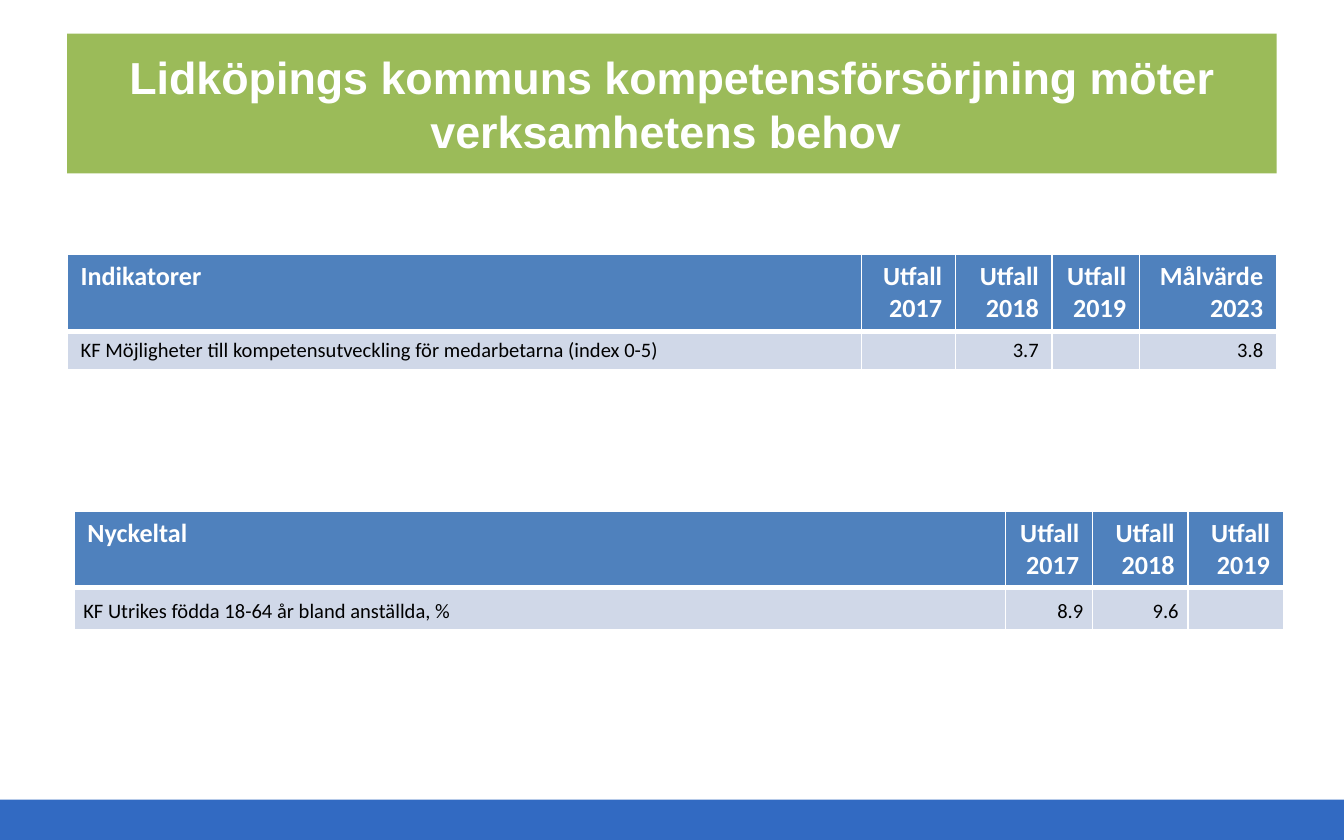
from lxml.etree import SubElement
from pptx import Presentation
from pptx.dml.color import RGBColor
from pptx.enum.shapes import MSO_SHAPE
from pptx.enum.text import MSO_ANCHOR, MSO_AUTO_SIZE, PP_ALIGN
from pptx.oxml.ns import qn
from pptx.util import Inches, Pt

WHITE, BLACK = "FFFFFF", "000000"
GREEN, BAR_BLUE = "9BBB59", "326AC2"
HEADER_BLUE, ROW_BLUE = "4F81BD", "D0D8E8"


def rgb(color):
    return RGBColor.from_string(color)


def paint(fill, color):
    fill.solid()
    fill.fore_color.rgb = rgb(color)


def draw_borders(cell, bottom_width):
    """Give a cell white borders; call before filling, as lines come first in tcPr."""
    properties = cell._tc.get_or_add_tcPr()
    for side, width in (("L", 1), ("R", 1), ("T", 1), ("B", bottom_width)):
        line = SubElement(properties, qn(f"a:ln{side}"), w=str(Pt(width)))
        solid = SubElement(line, qn("a:solidFill"))
        SubElement(solid, qn("a:srgbClr"), val=WHITE)


class SlideBuilder:
    body_font = "Calibri"
    title_font = "Arial"
    header_size, row_size, title_size = 14, 11, 24

    def __init__(self, slide):
        self.slide = slide

    def add_text(self, paragraph, text, font, size, color, bold):
        run = paragraph.add_run()
        run.text = text
        run.font.name = font
        run.font.size = Pt(size)
        run.font.bold = bold
        run.font.color.rgb = rgb(color)

    def title(self, text, left, top, width, height):
        banner = self.slide.shapes.title
        banner.left, banner.top = Inches(left), Inches(top)
        banner.width, banner.height = Inches(width), Inches(height)
        paint(banner.fill, GREEN)
        frame = banner.text_frame
        frame.word_wrap = True
        frame.auto_size = MSO_AUTO_SIZE.NONE
        frame.vertical_anchor = MSO_ANCHOR.MIDDLE
        paragraph = frame.paragraphs[0]
        paragraph.alignment = PP_ALIGN.CENTER
        self.add_text(paragraph, text, self.title_font, self.title_size, WHITE, True)

    def bar(self, left, top, width, height, color):
        bar = self.slide.shapes.add_shape(
            MSO_SHAPE.RECTANGLE, Inches(left), Inches(top), Inches(width), Inches(height))
        bar.shadow.inherit = False
        paint(bar.fill, color)
        bar.line.fill.background()

    def table(self, left, top, column_widths, row_heights, rows, padded=False):
        """Add a table with a header row; padded gives filled body cells their own margins."""
        table = self.slide.shapes.add_table(
            len(rows), len(column_widths), Inches(left), Inches(top),
            Inches(sum(column_widths)), Inches(sum(row_heights))).table
        for column, width in zip(table.columns, column_widths):
            column.width = Inches(width)
        for row, height in zip(table.rows, row_heights):
            row.height = Inches(height)
        for r, values in enumerate(rows):
            for c, value in enumerate(values):
                self.cell(table.cell(r, c), value, r == 0, c > 0, padded)

    def cell(self, cell, value, is_header, is_number, padded):
        draw_borders(cell, 3 if is_header else 1)
        paint(cell.fill, HEADER_BLUE if is_header else ROW_BLUE)
        size = self.header_size if is_header else self.row_size
        paragraph = cell.text_frame.paragraphs[0]
        if not value:
            SubElement(paragraph._p, qn("a:endParaRPr"), sz=str(size * 100))
            return
        if padded and not is_header:
            cell.vertical_anchor = MSO_ANCHOR.MIDDLE
            cell.margin_left = cell.margin_right = Inches(0.07)
            cell.margin_top, cell.margin_bottom = Inches(0.08), Inches(0.04)
        if is_number:
            paragraph.alignment = PP_ALIGN.RIGHT
        self.add_text(paragraph, value, self.body_font, size,
                      WHITE if is_header else BLACK, is_header)


def main():
    deck = Presentation()
    deck.slide_width, deck.slide_height = Inches(10), Inches(6.25)
    builder = SlideBuilder(deck.slides.add_slide(deck.slide_layouts[5]))

    builder.bar(0, 5.95, 10, 0.3, BAR_BLUE)
    builder.title("Lidköpings kommuns kompetensförsörjning möter verksamhetens behov ",
                  0.5, 0.25, 9, 1.04)

    outcomes = ["Utfall 2017", "Utfall 2018", "Utfall 2019"]
    builder.table(0.5, 1.89, [5.91, 0.7, 0.72, 0.65, 1.02], [0.57, 0.28], [
        ["Indikatorer", *outcomes, "Målvärde 2023"],
        ["KF Möjligheter till kompetensutveckling för medarbetarna (index 0-5)",
         "", "3.7", "", "3.8"],
    ])
    builder.table(0.55, 3.8, [6.93, 0.65, 0.71, 0.71], [0.57, 0.3], [
        ["Nyckeltal", *outcomes],
        ["KF Utrikes födda 18-64 år bland anställda, %", "8.9", "9.6", ""],
    ], padded=True)

    deck.save("out.pptx")


if __name__ == "__main__":
    main()
